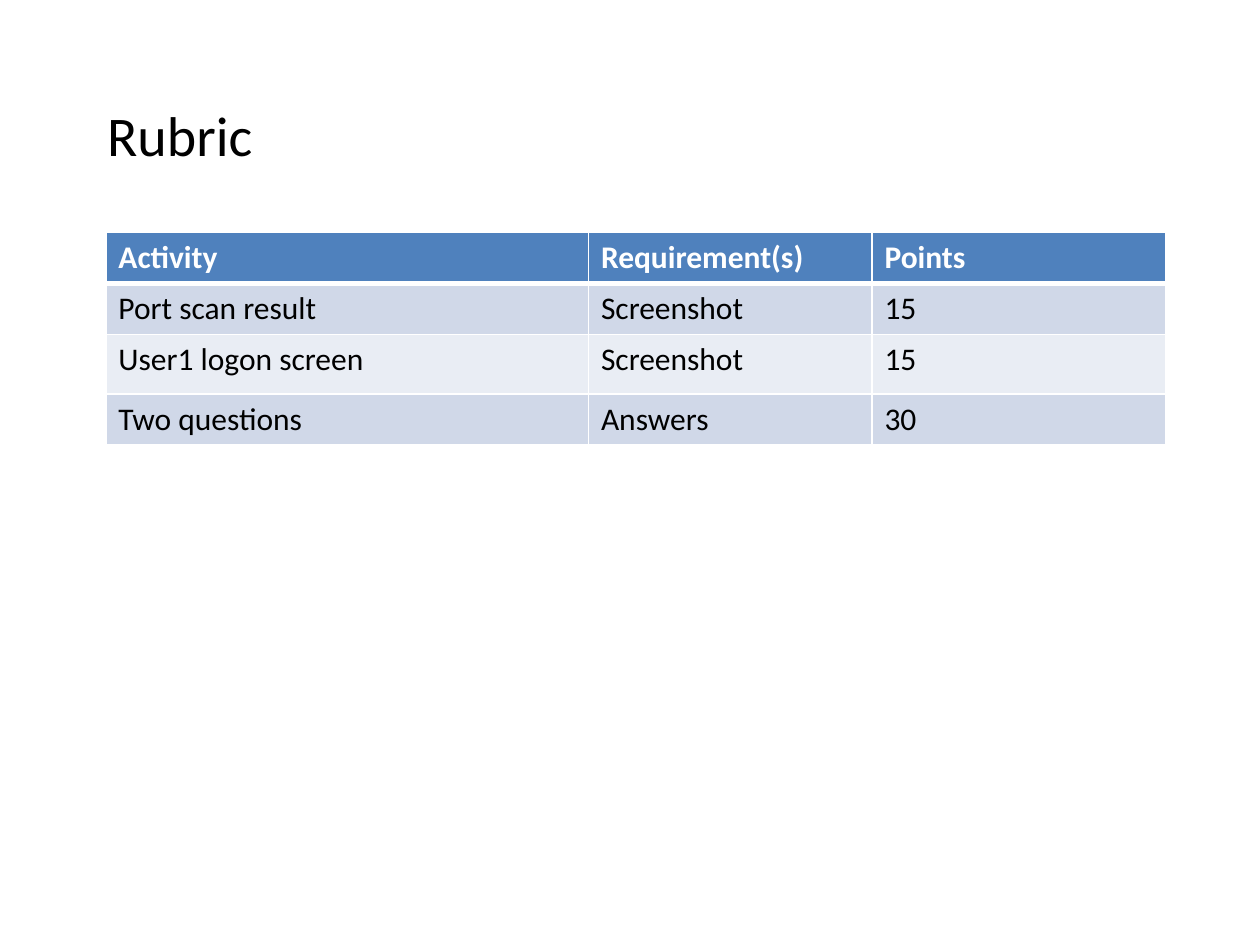
import pptx
import pptx.dml.color
import pptx.enum.text
import pptx.oxml
import pptx.oxml.ns
import pptx.util
from pptx.util import Inches

# Content
HEADING = "Rubric"
RUBRIC = [
    ("Activity", "Requirement(s)", "Points"),
    ("Port scan result", "Screenshot", "15"),
    ("User1 logon screen", "Screenshot", "15"),
    ("Two questions", "Answers", "30"),
]
COLUMN_WIDTHS = (3.83, 2.25, 2.33)
ROW_HEIGHTS = (0.41, 0.4, 0.47, 0.4)

THEME = {
    "font": "Calibri",
    "heading_size": 32,
    "table_size": 18,
    "text": "000000",
    "header_text": "FFFFFF",
    "header_fill": "4F81BD",
    "bands": ("D0D8E8", "E9EDF4"),
    "rule": "FFFFFF",
    "thin": 1,
    "thick": 3,
}


def rgb(value):
    return pptx.dml.color.RGBColor.from_string(value)


def style_text(paragraph, size, color, bold=False):
    font = paragraph.font
    font.name = THEME["font"]
    font.size = pptx.util.Pt(size)
    font.bold = bold
    font.color.rgb = rgb(color)


def set_borders(cell, widths):
    """Draw solid rules; widths are points for left, right, top, bottom."""
    properties = cell._tc.get_or_add_tcPr()
    for position, (side, width) in enumerate(zip("LRTB", widths)):
        rule = pptx.oxml.parse_xml(
            f'<a:ln{side} {pptx.oxml.ns.nsdecls("a")} w="{pptx.util.Pt(width)}">'
            f'<a:solidFill><a:srgbClr val="{THEME["rule"]}"/></a:solidFill>'
            f"</a:ln{side}>"
        )
        properties.insert(position, rule)


def add_heading(slide):
    heading = slide.shapes.title
    heading.left, heading.top = Inches(0.75), Inches(0.75)
    heading.width, heading.height = Inches(9), Inches(0.75)
    frame = heading.text_frame
    frame.text = HEADING
    frame.vertical_anchor = pptx.enum.text.MSO_ANCHOR.TOP
    frame.paragraphs[0].alignment = pptx.enum.text.PP_ALIGN.LEFT
    style_text(frame.paragraphs[0], THEME["heading_size"], THEME["text"])


def add_rubric(slide):
    rubric = slide.shapes.add_table(
        len(RUBRIC), len(COLUMN_WIDTHS), Inches(0.84), Inches(1.84),
        Inches(sum(COLUMN_WIDTHS)), Inches(sum(ROW_HEIGHTS)),
    ).table
    for column, width in zip(rubric.columns, COLUMN_WIDTHS):
        column.width = Inches(width)
    for row, height in zip(rubric.rows, ROW_HEIGHTS):
        row.height = Inches(height)

    thin, thick = THEME["thin"], THEME["thick"]
    for r, entries in enumerate(RUBRIC):
        is_header = r == 0
        fill = THEME["header_fill"] if is_header else THEME["bands"][(r - 1) % 2]
        color = THEME["header_text"] if is_header else THEME["text"]
        # The thick rule separates the header from the first entry
        top = thick if r == 1 else thin
        bottom = thick if is_header else thin
        for c, entry in enumerate(entries):
            cell = rubric.cell(r, c)
            cell.text = entry
            cell.fill.solid()
            cell.fill.fore_color.rgb = rgb(fill)
            style_text(cell.text_frame.paragraphs[0], THEME["table_size"], color, is_header)
            set_borders(cell, (thin, thin, top, bottom))


def main():
    deck = pptx.Presentation()
    deck.slide_width, deck.slide_height = Inches(10), Inches(7.5)
    slide = deck.slides.add_slide(deck.slide_layouts[5])  # Title Only
    add_heading(slide)
    add_rubric(slide)
    deck.save("out.pptx")


if __name__ == "__main__":
    main()
